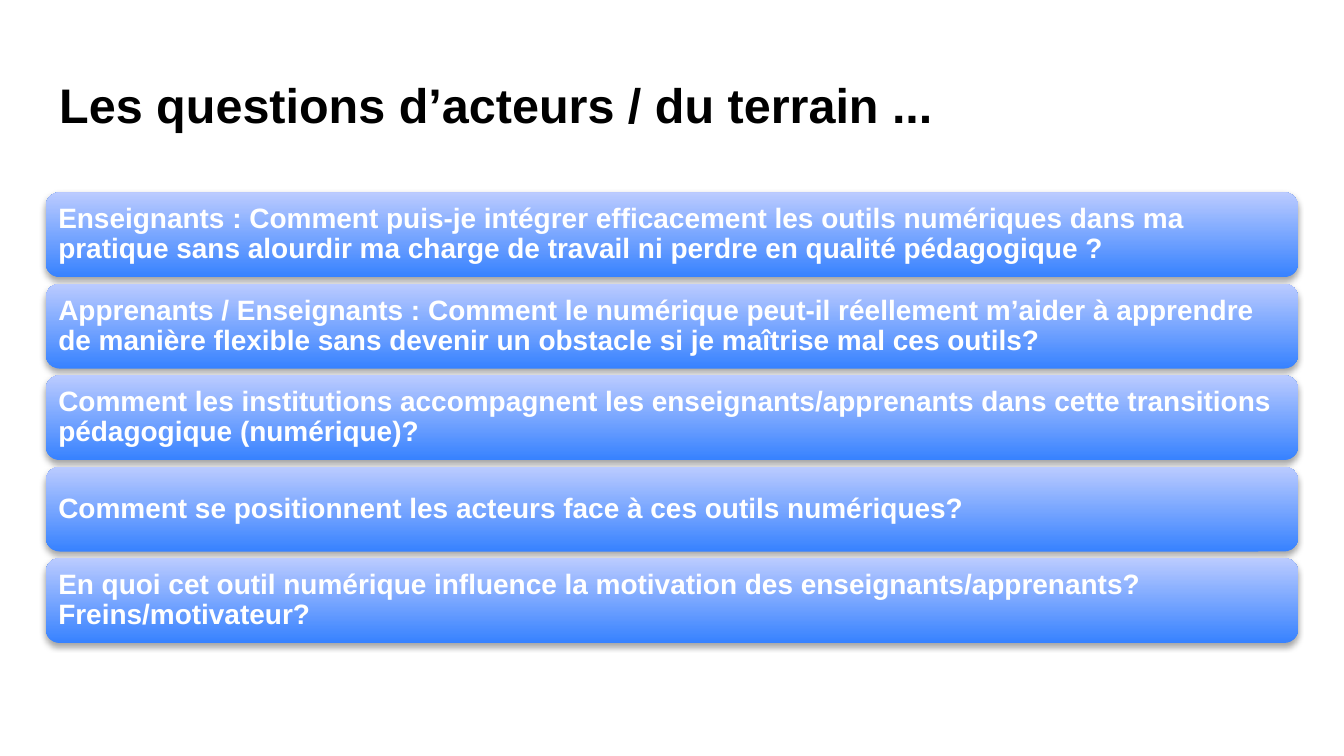
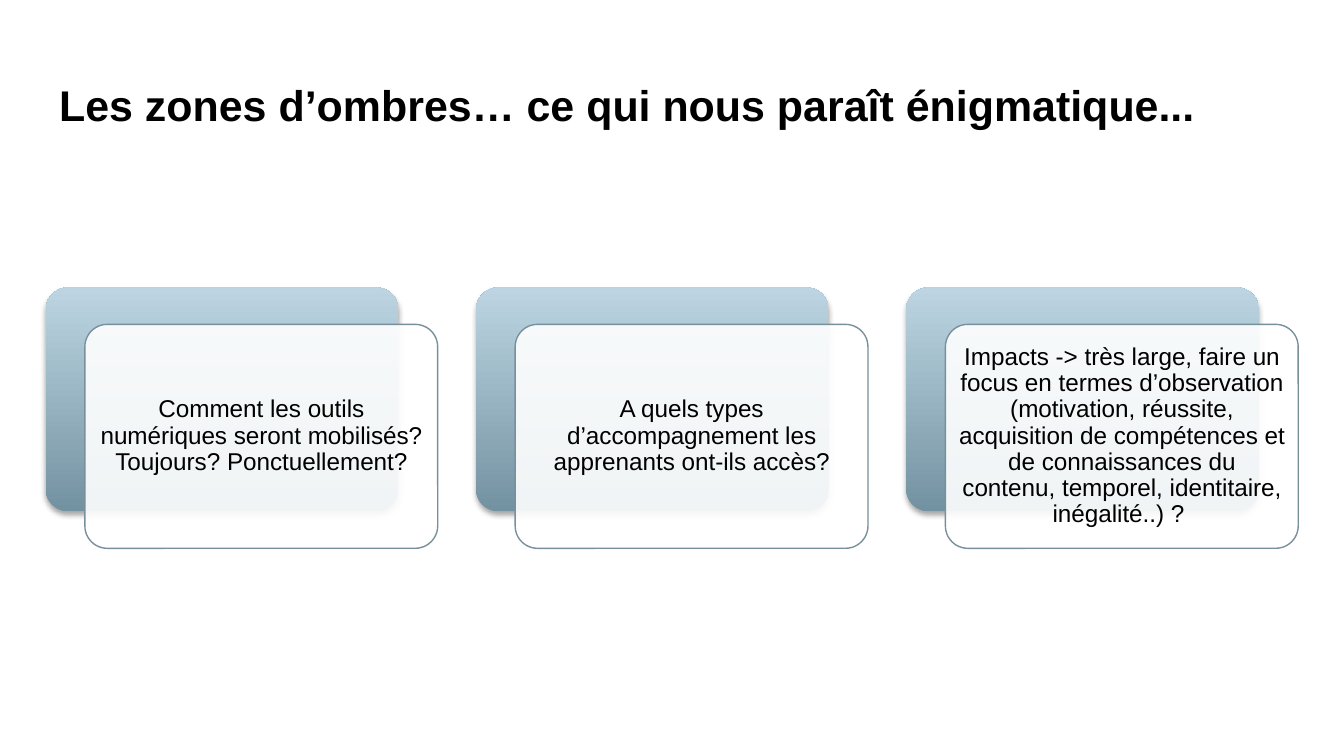
from dataclasses import dataclass

from lxml.etree import SubElement
from pptx import Presentation
from pptx.dml.color import RGBColor
from pptx.enum.shapes import MSO_SHAPE
from pptx.enum.text import MSO_ANCHOR, MSO_AUTO_SIZE, PP_ALIGN
from pptx.oxml.ns import qn
from pptx.util import Pt


@dataclass(frozen=True)
class Theme:
    font: str = "Arial"
    black: str = "000000"
    white: str = "FFFFFF"
    blue: tuple = ("3782FF", "BBCBFF")
    slate: tuple = ("7392A1", "BDD5E2")
    outline: str = "78909C"
    title_size: int = 26
    long_title_size: int = 23
    question_size: int = 15
    card_size: int = 13


theme = Theme()
LEFT, WIDTH = 24.5, 671


def write(sp, text, size, color=theme.black, bold=False, align=PP_ALIGN.LEFT, inset=7.2):
    tf = sp.text_frame
    tf.word_wrap = True
    tf.auto_size = MSO_AUTO_SIZE.NONE
    tf.vertical_anchor = MSO_ANCHOR.MIDDLE
    tf.margin_left = tf.margin_right = tf.margin_top = tf.margin_bottom = Pt(inset)
    p = tf.paragraphs[0]
    p.alignment = align
    p.line_spacing = 0.9
    r = p.add_run()
    r.text = text
    r.font.name = theme.font
    r.font.size = Pt(size)
    r.font.bold = bold
    r.font.color.rgb = RGBColor.from_string(color)


def add_panel(s, x, y, w, h, radius, gradient=None):
    """Rounded panel: shaded with a soft shadow, or translucent white with an outline."""
    sp = s.shapes.add_shape(MSO_SHAPE.ROUNDED_RECTANGLE, Pt(x), Pt(y), Pt(w), Pt(h))
    sp.adjustments[0] = radius
    sp.shadow.inherit = False
    spPr = sp._element.spPr
    if gradient:
        sp.fill.gradient()
        sp.fill.gradient_angle = 90
        for stop, color in zip(sp.fill.gradient_stops, gradient):
            stop.color.rgb = RGBColor.from_string(color)
        sp.line.fill.background()
        shadow = SubElement(spPr.find(qn("a:effectLst")), qn("a:outerShdw"),
                            blurRad=str(Pt(3.1)), dist=str(Pt(1.8)), dir="5400000",
                            rotWithShape="0")
        color = SubElement(shadow, qn("a:srgbClr"), val=theme.black)
        SubElement(color, qn("a:alpha"), val="35000")
    else:
        sp.fill.solid()
        sp.fill.fore_color.rgb = RGBColor.from_string(theme.white)
        SubElement(spPr.find(qn("a:solidFill"))[0], qn("a:alpha"), val="90000")
        sp.line.color.rgb = RGBColor.from_string(theme.outline)
        sp.line.width = Pt(0.75)
    return sp


prs = Presentation()
prs.slide_width, prs.slide_height = Pt(720), Pt(405)

titles = [
    ("Les questions d’acteurs / du terrain ...", theme.title_size),
    ("Les zones d’ombres… ce qui nous paraît énigmatique...", theme.long_title_size),
]
for text, size in titles:
    s = prs.slides.add_slide(prs.slide_layouts[5])
    title = s.shapes.title
    title.left, title.top, title.width, title.height = Pt(LEFT), Pt(35), Pt(WIDTH), Pt(45)
    write(title, text, size, bold=True)

questions_slide, shadows_slide = prs.slides

# Stacked question bars
questions = [
    "Enseignants : Comment puis-je intégrer efficacement les outils numériques dans ma "
    "pratique sans alourdir ma charge de travail ni perdre en qualité pédagogique ?",
    "Apprenants / Enseignants : Comment le numérique peut-il réellement m’aider à apprendre "
    "de manière flexible sans devenir un obstacle si je maîtrise mal ces outils?",
    "Comment les institutions accompagnent les enseignants/apprenants dans cette transitions "
    "pédagogique (numérique)?",
    "Comment se positionnent les acteurs face à ces outils numériques?",
    "En quoi cet outil numérique influence la motivation des enseignants/apprenants? "
    "Freins/motivateur?",
]
for i, text in enumerate(questions):
    bar = add_panel(questions_slide, LEFT, 103 + 49 * i, WIDTH, 45.5, 0.167, theme.blue)
    write(bar, text, theme.question_size, theme.white, bold=True, inset=4.5)

# Cards, each in front of an offset shaded panel
cards = [
    "Comment les outils numériques seront mobilisés? Toujours? Ponctuellement?",
    "A quels types d’accompagnement les apprenants ont-ils accès?",
    "Impacts -> très large, faire un focus en termes d’observation (motivation, réussite, "
    "acquisition de compétences et de connaissances du contenu, temporel, identitaire, "
    "inégalité..) ? ",
]
card_w, card_h, top, dx, dy = 189, 120, 154, 21, 19.75
pitch = (WIDTH - card_w - dx) / (len(cards) - 1)
for i, text in enumerate(cards):
    x = LEFT + pitch * i
    add_panel(shadows_slide, x, top, card_w, card_h, 0.1, theme.slate)
    card = add_panel(shadows_slide, x + dx, top + dy, card_w, card_h, 0.1)
    write(card, text, theme.card_size, align=PP_ALIGN.CENTER, inset=3.6)

prs.save("out.pptx")
